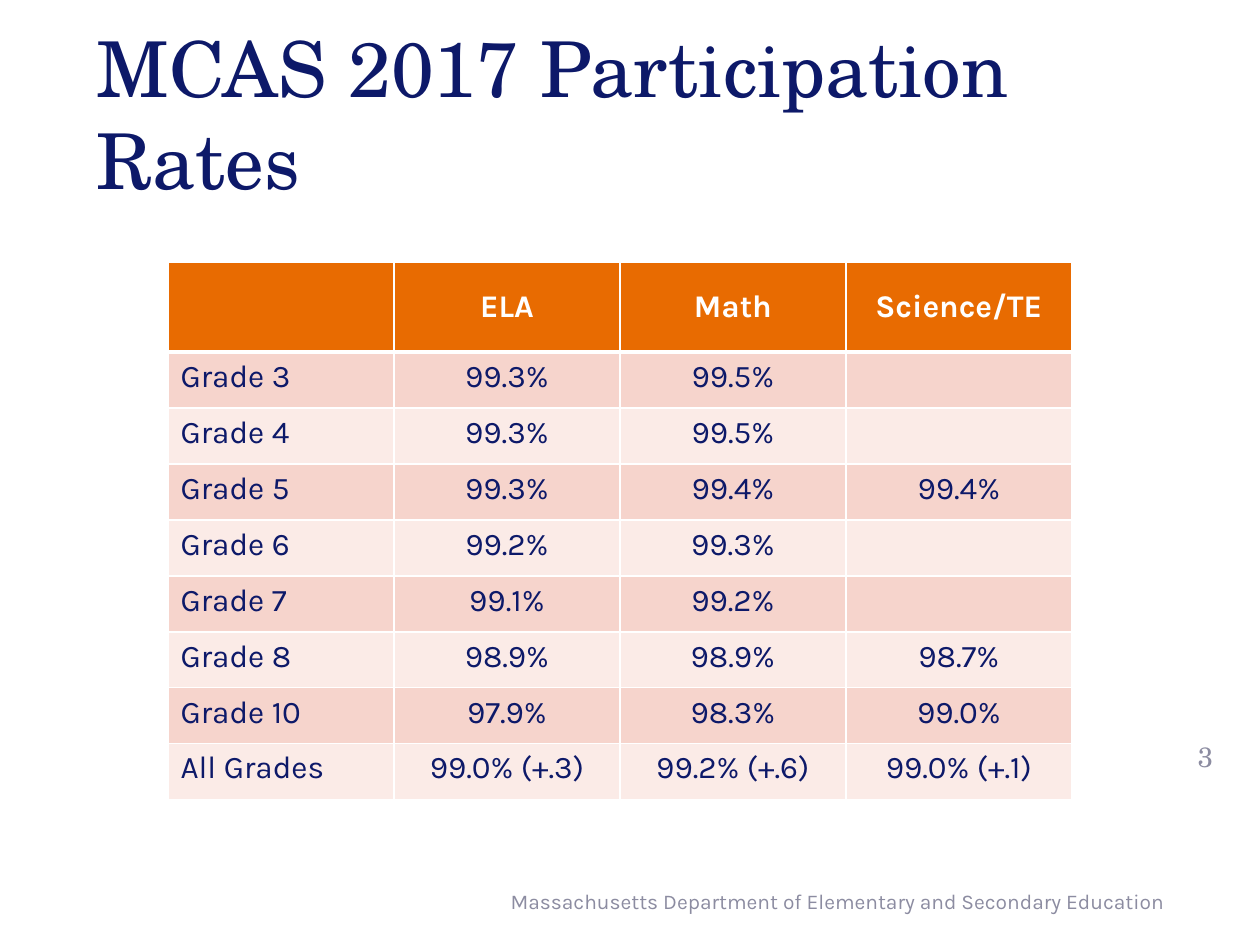
import dataclasses

import lxml.etree
import pptx
import pptx.dml.color
import pptx.enum.text
import pptx.oxml.ns
import pptx.util

ALIGN = pptx.enum.text.PP_ALIGN
ANCHOR = pptx.enum.text.MSO_ANCHOR
EMU_PER_PX = 914400 / 126


@dataclasses.dataclass(frozen=True)
class Theme:
    """Colours, fonts and type sizes of the slide."""

    navy: str = "0D1969"
    grey: str = "8C8CA1"
    white: str = "FFFFFF"
    orange: str = "E86B01"
    bands: tuple = ("F6D4CC", "FBEBE7")
    serif: str = "TeX Gyre Schola"
    sans: str = "Karla"
    title_size: int = 44
    table_size: int = 18
    number_size: int = 16
    footer_size: int = 12


THEME = Theme()

HEADINGS = ("", "ELA", "Math", "Science/TE")
RATES = (
    ("Grade 3", "99.3%", "99.5%", ""),
    ("Grade 4", "99.3%", "99.5%", ""),
    ("Grade 5", "99.3%", "99.4%", "99.4%"),
    ("Grade 6", "99.2%", "99.3%", ""),
    ("Grade 7", "99.1%", "99.2%", ""),
    ("Grade 8", "98.9%", "98.9%", "98.7%"),
    ("Grade 10", "97.9%", "98.3%", "99.0%"),
    ("All Grades", "99.0% (+.3)", "99.2% (+.6)", "99.0% (+.1)"),
)


def px(length):
    """Turn pixels into EMU."""
    return pptx.util.Emu(round(length * EMU_PER_PX))


def rgb(value):
    """Turn a hex string into a colour."""
    return pptx.dml.color.RGBColor.from_string(value)


def write_text(frame, text, *, font, size, color, align=ALIGN.LEFT, bold=False):
    """Write one formatted paragraph into a text frame."""
    frame.word_wrap = True
    para = frame.paragraphs[0]
    para.alignment = align
    para.font.size = pptx.util.Pt(size)
    if text:
        span = para.add_run()
        span.text = text
        span.font.name = font
        span.font.size = pptx.util.Pt(size)
        span.font.bold = bold
        span.font.color.rgb = rgb(color)


def add_text_box(page, box, text, **text_format):
    """Place a vertically centred text box."""
    frame = page.shapes.add_textbox(*map(px, box)).text_frame
    frame.vertical_anchor = ANCHOR.MIDDLE
    write_text(frame, text, **text_format)


def set_borders(cell, color, **widths):
    """Draw the four cell borders, one point wide unless a side says otherwise."""
    properties = cell._tc.get_or_add_tcPr()
    for side in "LRTB":
        line = lxml.etree.SubElement(properties, pptx.oxml.ns.qn(f"a:ln{side}"))
        line.set("w", str(pptx.util.Pt(widths.get(side, 1))))
        fill = lxml.etree.SubElement(line, pptx.oxml.ns.qn("a:solidFill"))
        lxml.etree.SubElement(fill, pptx.oxml.ns.qn("a:srgbClr")).set("val", color)


def add_rates_table(page, box, header_height):
    """Place the participation table, sharing the height below the header equally."""
    left, top, width, height = box
    rows = (HEADINGS, *RATES)
    table = page.shapes.add_table(len(rows), len(HEADINGS), *map(px, box)).table
    table.horz_banding = False
    for column in table.columns:
        column.width = px(width / len(HEADINGS))
    for row_index, values in enumerate(rows):
        header = row_index == 0
        row_height = header_height if header else (height - header_height) / len(RATES)
        table.rows[row_index].height = px(row_height)
        for column_index, value in enumerate(values):
            cell = table.cell(row_index, column_index)
            set_borders(cell, THEME.white, B=3 if header else 1, T=3 if row_index == 1 else 1)
            cell.fill.solid()
            cell.fill.fore_color.rgb = rgb(THEME.orange if header else THEME.bands[(row_index - 1) % 2])
            cell.vertical_anchor = ANCHOR.MIDDLE if header else ANCHOR.TOP
            write_text(
                cell.text_frame,
                value,
                font=THEME.sans,
                size=THEME.table_size,
                color=THEME.white if header else THEME.navy,
                align=ALIGN.CENTER if header or column_index else ALIGN.LEFT,
                bold=header,
            )


def add_title(page, box):
    """Place the slide title."""
    add_text_box(page, box, "MCAS 2017 Participation Rates",
                 font=THEME.serif, size=THEME.title_size, color=THEME.navy)


def add_footer(page, box):
    """Place the department line."""
    add_text_box(page, box, "Massachusetts Department of Elementary and Secondary Education",
                 font=THEME.sans, size=THEME.footer_size, color=THEME.grey, align=ALIGN.RIGHT)


def add_page_number(page, box):
    """Place the page number."""
    add_text_box(page, box, "3", font=THEME.serif, size=THEME.number_size,
                 color=THEME.grey, align=ALIGN.CENTER)


def main():
    """Build the slide and save it."""
    deck = pptx.Presentation()
    deck.slide_width, deck.slide_height = px(1260), px(945)
    page = deck.slides.add_slide(deck.slide_layouts[6])
    add_title(page, (84, 53, 1092, 120))
    add_rates_table(page, (168, 262, 904, 538), header_height=90)
    add_footer(page, (431, 876, 746, 50))
    add_page_number(page, (1169, 725, 73, 63))
    deck.save("out.pptx")


if __name__ == "__main__":
    main()
